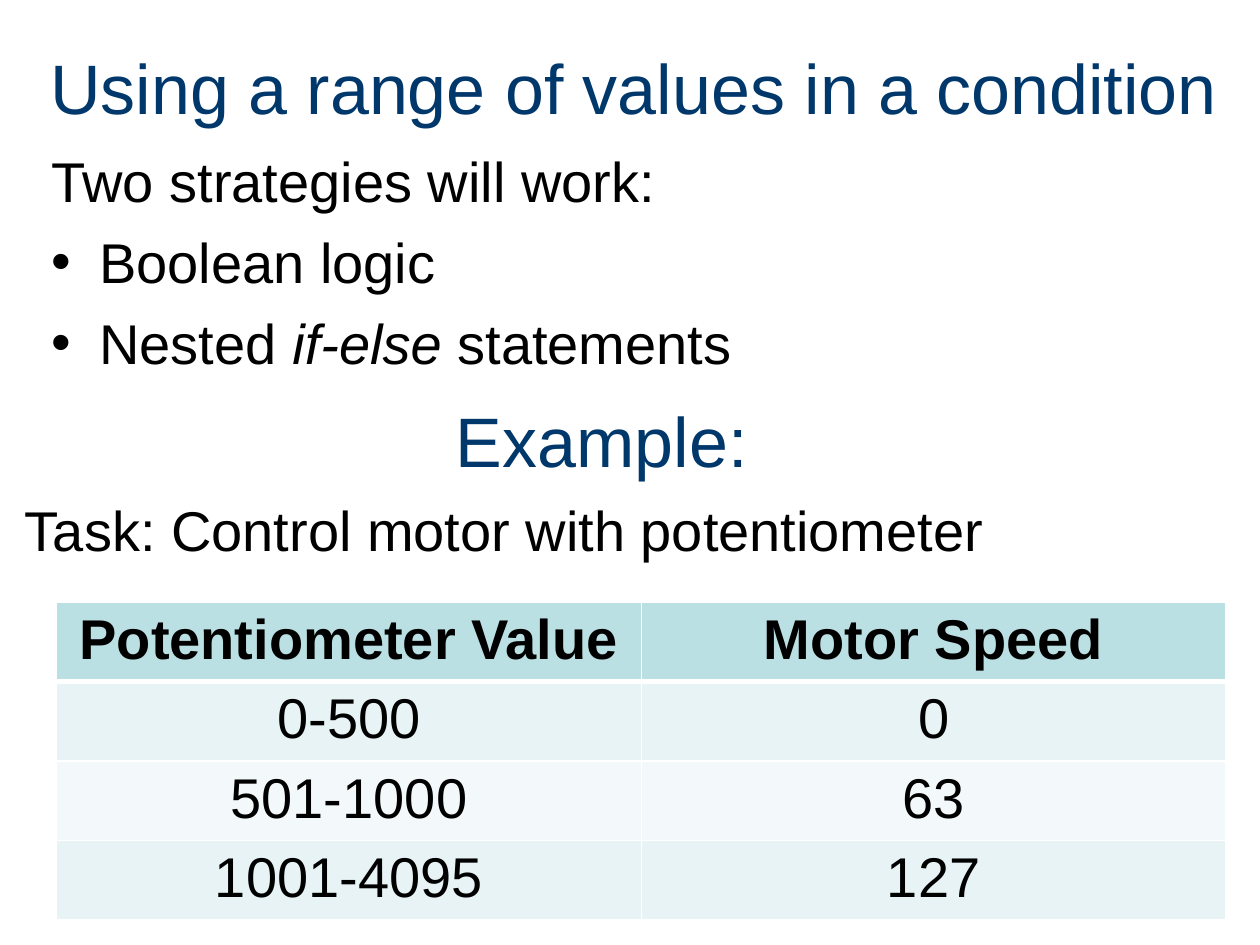
from lxml import etree
from pptx import Presentation
from pptx.dml.color import RGBColor
from pptx.enum.text import MSO_ANCHOR, MSO_AUTO_SIZE, PP_ALIGN
from pptx.oxml.ns import qn
from pptx.util import Inches, Pt

LEFT, CENTER = PP_ALIGN.LEFT, PP_ALIGN.CENTER
TOP, MIDDLE = MSO_ANCHOR.TOP, MSO_ANCHOR.MIDDLE
NO_FIT = MSO_AUTO_SIZE.NONE
TITLE_ONLY = 5
COLORS = {"heading": "00386B", "text": "000000", "line": "FFFFFF",
          "header": "BBE0E3", "odd": "E7F3F4", "even": "F3F9FA"}
HEADING = {"size": 40, "color": "heading"}


def write(para, text, size=32, color="text", bold=False, italic=False, align=LEFT):
    para.alignment = align
    span = para.add_run()
    span.text = text
    font = span.font
    font.name, font.size, font.bold, font.italic = "Arial", Pt(size), bold, italic
    font.color.rgb = RGBColor.from_string(COLORS[color])


def place(box, left, top, width, height, anchor=TOP):
    """Set a box's bounds in inches and return its wrapped text frame."""
    box.left, box.top = Inches(left), Inches(top)
    box.width, box.height = Inches(width), Inches(height)
    frame = box.text_frame
    frame.word_wrap, frame.auto_size, frame.vertical_anchor = True, NO_FIT, anchor
    return frame


deck = Presentation()
deck.slide_width, deck.slide_height = Inches(10), Inches(7.5)
page = deck.slides.add_slide(deck.slide_layouts[TITLE_ONLY])

title = place(page.shapes.title, 0.3, 0.3, 9.5, 0.78, MIDDLE)
write(title.paragraphs[0], "Using a range of values in a condition", **HEADING)

# Strategies: an introduction and two bullets
strategies = place(page.shapes.add_textbox(0, 0, 0, 0), 0.31, 1.11, 9, 2.25)
lines = [["Two strategies will work:"], ["Boolean logic"],
         ["Nested ", "if-else", " statements"]]
for index, parts in enumerate(lines):
    para = strategies.paragraphs[0] if index == 0 else strategies.add_paragraph()
    for part in parts:
        write(para, part, italic=part == "if-else")
    properties = para._p.get_or_add_pPr()
    properties.set("marL", str(Inches(0.38)))
    properties.set("indent", str(-Inches(0.38)))
    if index > 0:
        para.space_before = Pt(8)
        etree.SubElement(properties, qn("a:buFont"), typeface="Arial")
        etree.SubElement(properties, qn("a:buChar"), char="•")

# Example heading and task
example = place(page.shapes.add_textbox(0, 0, 0, 0), 3.52, 3.1, 6.28, 0.78, MIDDLE)
write(example.paragraphs[0], "Example:", **HEADING)
task = place(page.shapes.add_textbox(0, 0, 0, 0), 0.1, 3.88, 9.8, 0.64)
write(task.paragraphs[0], "Task: Control motor with potentiometer")

# Potentiometer ranges and motor speeds
speeds = [("Potentiometer Value", "Motor Speed"),
          ("0-500", "0"), ("501-1000", "63"), ("1001-4095", "127")]
table = page.shapes.add_table(len(speeds), 2, Inches(0.45), Inches(4.78),
                              Inches(9.28), Inches(2.52)).table
for row, values in enumerate(speeds):
    fill = "header" if row == 0 else "odd" if row % 2 else "even"
    for column, value in enumerate(values):
        cell = table.cell(row, column)
        write(cell.text_frame.paragraphs[0], value, bold=row == 0, align=CENTER)
        borders = cell._tc.get_or_add_tcPr()
        for side in "LRTB":
            thick = (row, side) in ((0, "B"), (1, "T"))
            border = etree.SubElement(borders, qn(f"a:ln{side}"),
                                      w=str(Pt(3 if thick else 1)))
            solid = etree.SubElement(border, qn("a:solidFill"))
            etree.SubElement(solid, qn("a:srgbClr"), val=COLORS["line"])
        cell.fill.solid()
        cell.fill.fore_color.rgb = RGBColor.from_string(COLORS[fill])

deck.save("out.pptx")
